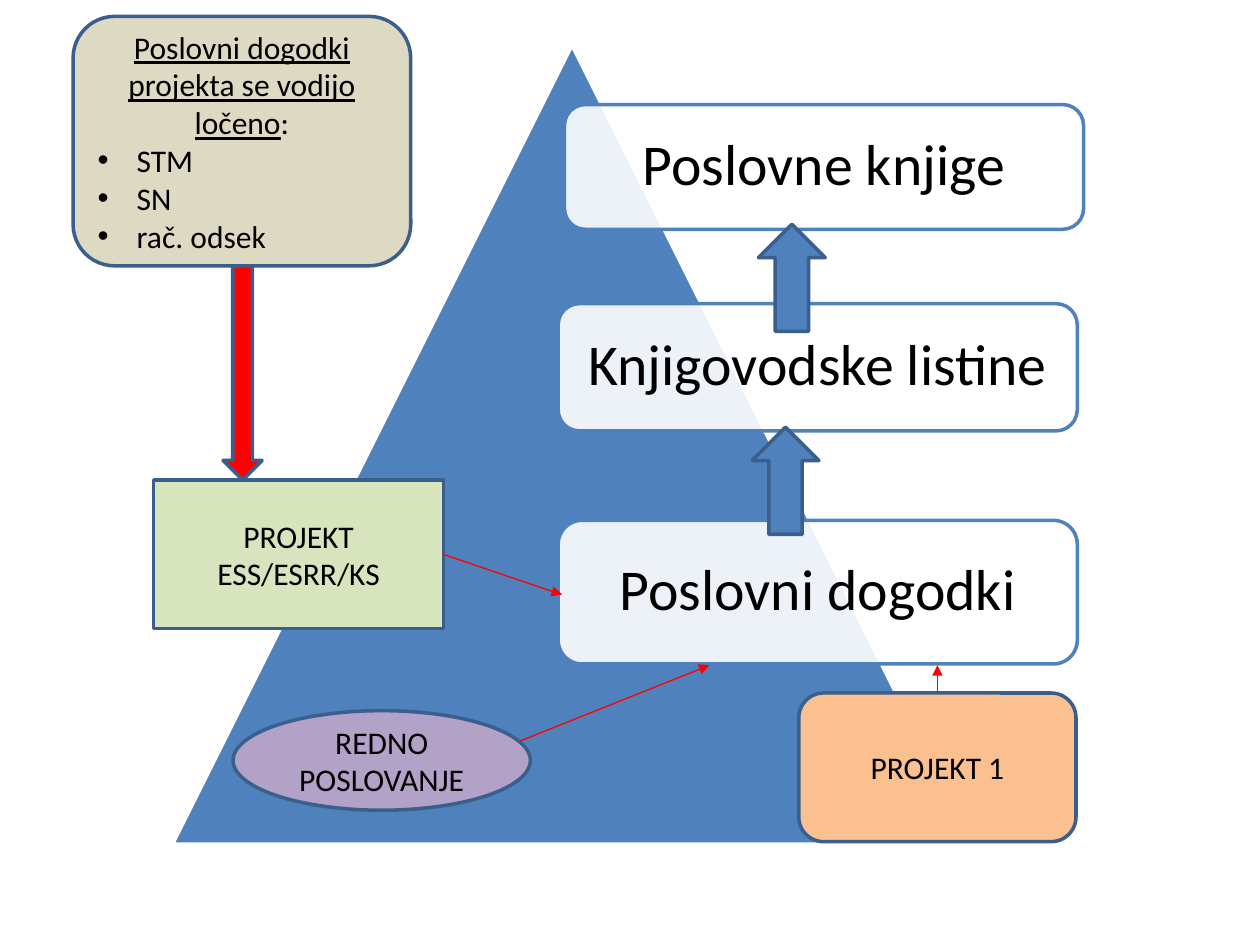
from lxml import etree
from pptx import Presentation
from pptx.dml.color import RGBColor
from pptx.enum.shapes import MSO_CONNECTOR, MSO_SHAPE
from pptx.enum.text import MSO_ANCHOR, PP_ALIGN
from pptx.oxml.ns import qn
from pptx.util import Inches, Pt

TRIANGLE = MSO_SHAPE.ISOSCELES_TRIANGLE
ROUNDED = MSO_SHAPE.ROUNDED_RECTANGLE
RECT = MSO_SHAPE.RECTANGLE
OVAL = MSO_SHAPE.OVAL
UP = MSO_SHAPE.UP_ARROW
DOWN = MSO_SHAPE.DOWN_ARROW
STRAIGHT = MSO_CONNECTOR.STRAIGHT
MIDDLE = MSO_ANCHOR.MIDDLE
CENTER = PP_ALIGN.CENTER
JUSTIFY = PP_ALIGN.JUSTIFY

COLORS = {
    "blue": "4F81BD", "edge": "3A5F8C", "white": "FFFFFF", "black": "000000",
    "red": "FF0000", "purple": "B3A2C7", "green": "D7E4BD",
    "orange": "FAC090", "beige": "DDD9C3",
}
FONT = "Calibri"

LEVELS = [
    ("Poslovne knjige", 4.48, 0.83, 4.12, 0.99),
    ("Knjigovodske listine", 4.43, 2.41, 4.12, 1.01),
    ("Poslovni dogodki", 4.43, 4.13, 4.12, 1.14),
]
UP_ARROWS = [(6.02, 1.78), (5.97, 3.39)]
SOURCES = [
    ("REDNO POSLOVANJE", OVAL, "purple", 1.85, 5.64, 2.36, 0.79),
    ("PROJEKT ESS/ESRR/KS", RECT, "green", 1.22, 3.81, 2.3, 1.18),
    ("PROJEKT 1", ROUNDED, "orange", 6.34, 5.5, 2.2, 1.18),
]
LINKS = [
    ("PROJEKT ESS/ESRR/KS", 3, (3.52, 4.4), (4.46, 4.72)),
    ("REDNO POSLOVANJE", None, (4.13, 5.88), (5.63, 5.28)),
    ("PROJEKT 1", 0, (7.44, 5.5), (7.44, 5.28)),
]
NOTE_TITLE = "Poslovni dogodki projekta se vodijo ločeno"
NOTE_ITEMS = ["STM", "SN", "rač. odsek"]


def rgb(name):
    return RGBColor.from_string(COLORS[name])


def add_shape(s, kind, box, fill, line="edge"):
    sp = s.shapes.add_shape(kind, *map(Inches, box))
    sp.shadow.inherit = False
    sp.fill.solid()
    sp.fill.fore_color.rgb = rgb(fill)
    sp.line.color.rgb = rgb(line)
    sp.line.width = Pt(2)
    return sp


def style(p, size, align=CENTER):
    p.alignment = align
    p.font.size = Pt(size)
    p.font.name = FONT
    p.font.color.rgb = rgb("black")


def write(sp, text, size=18):
    tf = sp.text_frame
    tf.word_wrap = True
    tf.vertical_anchor = MIDDLE
    p = tf.paragraphs[0]
    p.text = text
    style(p, size)
    return tf


def add_level(s, text, *box):
    sp = add_shape(s, ROUNDED, box, "white", "blue")
    color = sp.fill._xPr.find(qn("a:solidFill"))[0]
    etree.SubElement(color, qn("a:alpha"), val="90000")
    tf = write(sp, text, 33)
    tf.margin_left = tf.margin_right = Inches(0.14)
    tf.margin_top = tf.margin_bottom = Inches(0.14)
    tf.paragraphs[0].line_spacing = 0.9


def add_link(s, source, site, start, end):
    c = s.shapes.add_connector(STRAIGHT, *map(Inches, start + end))
    if site is not None:
        c.begin_connect(source, site)
    c.line.color.rgb = rgb("red")
    c.line.width = Pt(0.75)
    etree.SubElement(c.line._get_or_add_ln(), qn("a:tailEnd"), type="triangle")
    etree.SubElement(c._element.spPr, qn("a:effectLst"))


def add_note(s):
    tf = write(add_shape(s, ROUNDED, (0.58, 0.13, 2.68, 1.98), "beige"), NOTE_TITLE)
    title = tf.paragraphs[0]
    title.runs[0].font.underline = True
    title.add_run().text = ":"
    for item in NOTE_ITEMS:
        p = tf.add_paragraph()
        p.text = item
        style(p, 18, JUSTIFY)
        pPr = p._p.get_or_add_pPr()
        pPr.set("marL", str(Inches(0.31)))
        pPr.set("indent", str(Inches(-0.31)))
        bullet_font = etree.Element(qn("a:buFont"), typeface="Arial")
        bullet = etree.Element(qn("a:buChar"), char="•")
        pPr.insert(0, bullet_font)
        pPr.insert(1, bullet)


def main():
    prs = Presentation()
    prs.slide_width, prs.slide_height = Inches(10), Inches(7.5)
    s = prs.slides.add_slide(prs.slide_layouts[6])

    add_shape(s, TRIANGLE, (1.37, 0.36, 6.34, 6.34), "blue", "white")
    for level in LEVELS:
        add_level(s, *level)
    for left, top in UP_ARROWS:
        add_shape(s, UP, (left, top, 0.53, 0.85), "blue")

    sources = {}
    for text, kind, fill, *box in SOURCES:
        sources[text] = add_shape(s, kind, box, fill)
        write(sources[text], text)
    for name, site, start, end in LINKS:
        add_link(s, sources[name], site, start, end)

    add_note(s)
    add_shape(s, DOWN, (1.77, 2.11, 0.31, 1.7), "red")
    prs.save("out.pptx")


if __name__ == "__main__":
    main()
